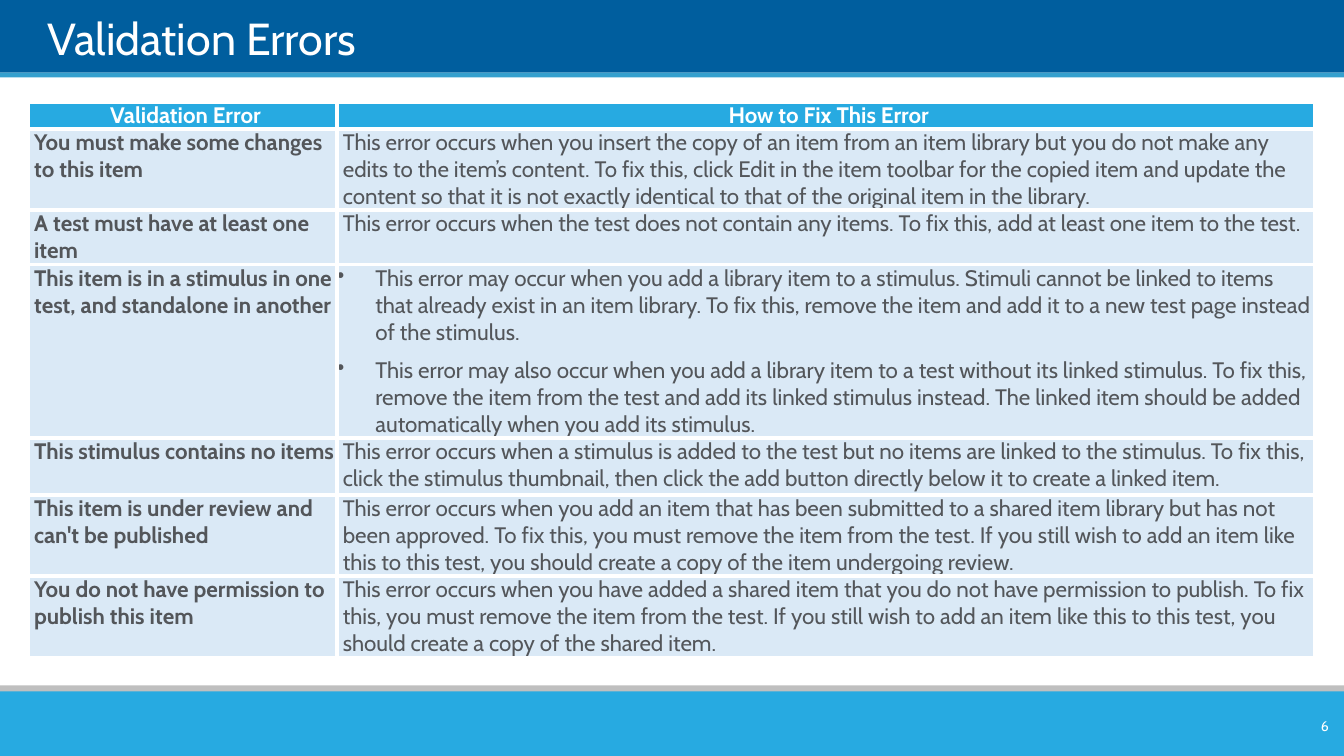
import pptx
import pptx.dml.color
import pptx.enum.shapes
import pptx.enum.text
import pptx.oxml
import pptx.oxml.ns
import pptx.util

Cm = pptx.util.Cm
Pt = pptx.util.Pt
ALIGN = pptx.enum.text.PP_ALIGN
ANCHOR = pptx.enum.text.MSO_ANCHOR
FONT = "Cabin"
WIDE, HIGH = 33.87, 19.05
HUES = {
    "navy": "005E9E",
    "stripe": "35A0CE",
    "grey": "BFBFBF",
    "sky": "27AAE1",
    "pale": "DAE9F6",
    "ink": "53565A",
    "white": "FFFFFF",
}
TITLES = ["Validation Error", "How to Fix This Error"]
ERRORS = [
    (2.05, "You must make some changes to this item", [
        "This error occurs when you insert the copy of an item from an item library but you do not make any edits to the item’s content. To fix this, click Edit in the item toolbar for the copied item and update the content so that it is not exactly identical to that of the original item in the library."]),
    (1.37, "A test must have at least one item", [
        "This error occurs when the test does not contain any items. To fix this, add at least one item to the test."]),
    (4.37, "This item is in a stimulus in one test, and standalone in another", [
        "This error may occur when you add a library item to a stimulus. Stimuli cannot be linked to items that already exist in an item library. To fix this, remove the item and add it to a new test page instead of the stimulus.",
        "This error may also occur when you add a library item to a test without its linked stimulus. To fix this, remove the item from the test and add its linked stimulus instead. The linked item should be added automatically when you add its stimulus."]),
    (1.43, "This stimulus contains no items", [
        "This error occurs when a stimulus is added to the test but no items are linked to the stimulus. To fix this, click the stimulus thumbnail, then click the add button directly below it to create a linked item."]),
    (2.05, "This item is under review and can't be published", [
        "This error occurs when you add an item that has been submitted to a shared item library but has not been approved. To fix this, you must remove the item from the test. If you still wish to add an item like this to this test, you should create a copy of the item undergoing review."]),
    (2.05, "You do not have permission to publish this item", [
        "This error occurs when you have added a shared item that you do not have permission to publish. To fix this, you must remove the item from the test. If you still wish to add an item like this to this test, you should create a copy of the shared item."]),
]


def tint(hue):
    return pptx.dml.color.RGBColor.from_string(HUES[hue])


def make(xml):
    return pptx.oxml.parse_xml(xml.replace(" ", f" {pptx.oxml.ns.nsdecls('a')} ", 1))


def band(slide, box, hue):
    bar = slide.shapes.add_shape(
        pptx.enum.shapes.MSO_SHAPE.RECTANGLE, *(Cm(side) for side in box))
    bar.shadow.inherit = False
    bar.fill.solid()
    bar.fill.fore_color.rgb = tint(hue)
    bar.line.fill.background()


def write(para, text, size, hue, bold=False):
    run = para.add_run()
    run.text = text
    run.font.name = FONT
    run.font.size = Pt(size)
    run.font.bold = bold
    run.font.color.rgb = tint(hue)


def label(slide, box, text, size, anchor, align):
    frame = slide.shapes.add_textbox(*(Cm(side) for side in box)).text_frame
    frame.word_wrap = True
    frame.vertical_anchor = anchor
    frame.margin_left = frame.margin_right = 0
    frame.margin_top = frame.margin_bottom = 0
    frame.paragraphs[0].alignment = align
    write(frame.paragraphs[0], text, size, "white")


def head(slide, box):
    left, top, width, height = box
    band(slide, (left, top, width, height - 0.12), "navy")
    band(slide, (left, top + height - 0.12, width, 0.12), "stripe")
    label(slide, (left + 1.19, top + 0.18, width - 2.29, 1.45),
          "Validation Errors", 32, ANCHOR.BOTTOM, ALIGN.LEFT)


def foot(slide, box):
    left, top, width, height = box
    band(slide, (left, top, width, 0.36), "grey")
    band(slide, (left, top + 0.15, width, height - 0.15), "sky")
    label(slide, (left + width - 2.09, top + 0.64, 1.71, 0.76),
          "6", 10, ANCHOR.MIDDLE, ALIGN.RIGHT)


def edge(cell):
    props = cell._tc.get_or_add_tcPr()
    for spot, side in enumerate("LRTB"):
        props.insert(spot, make(
            f'<a:ln{side} w="{Pt(3)}"><a:solidFill><a:srgbClr val="{HUES["white"]}"/>'
            f'</a:solidFill></a:ln{side}>'))


def fill(cell, texts, back, hue, bold, align):
    cell.fill.solid()
    cell.fill.fore_color.rgb = tint(back)
    cell.margin_left = cell.margin_right = 0
    cell.margin_top = cell.margin_bottom = 0
    edge(cell)
    frame = cell.text_frame
    listed = len(texts) > 1
    for place, text in enumerate(texts):
        para = frame.add_paragraph() if place else frame.paragraphs[0]
        props = para._p.get_or_add_pPr()
        props.set("marL", str(Cm(0.97 if listed else 0.15)))
        props.set("indent", str(Cm(-0.97 if listed else 0)))
        if listed:
            props.append(make('<a:buChar char="•"/>'))
            props.append(make(
                f'<a:tabLst ><a:tab pos="{Cm(0.58)}" algn="l"/></a:tabLst>'))
        para.alignment = align
        para.space_before = Pt(4 if place else 0)
        para.space_after = Pt(4)
        write(para, text, 16, hue, bold)


def body(slide, box):
    left, top, width = box
    heights = [0.66] + [height for height, name, fixes in ERRORS]
    grid = slide.shapes.add_table(
        len(heights), 2, Cm(left), Cm(top), Cm(width), Cm(sum(heights))).table
    grid.first_row = grid.horz_banding = False
    grid.columns[0].width = Cm(7.78)
    grid.columns[1].width = Cm(width - 7.78)
    for row, height in zip(grid.rows, heights):
        row.height = Cm(height)
    for col, title in enumerate(TITLES):
        fill(grid.cell(0, col), [title], "sky", "white", True, ALIGN.CENTER)
    for row, (height, name, fixes) in enumerate(ERRORS, 1):
        fill(grid.cell(row, 0), [name], "pale", "ink", True, ALIGN.LEFT)
        fill(grid.cell(row, 1), fixes, "pale", "ink", False, ALIGN.LEFT)


def main():
    deck = pptx.Presentation()
    deck.slide_width = Cm(WIDE)
    deck.slide_height = Cm(HIGH)
    slide = deck.slides.add_slide(deck.slide_layouts[6])
    head(slide, (0, 0, WIDE, 1.95))
    foot(slide, (0, 17.27, WIDE, HIGH - 17.27))
    body(slide, (0.71, 2.57, 32.42))
    deck.save("out.pptx")


if __name__ == "__main__":
    main()
